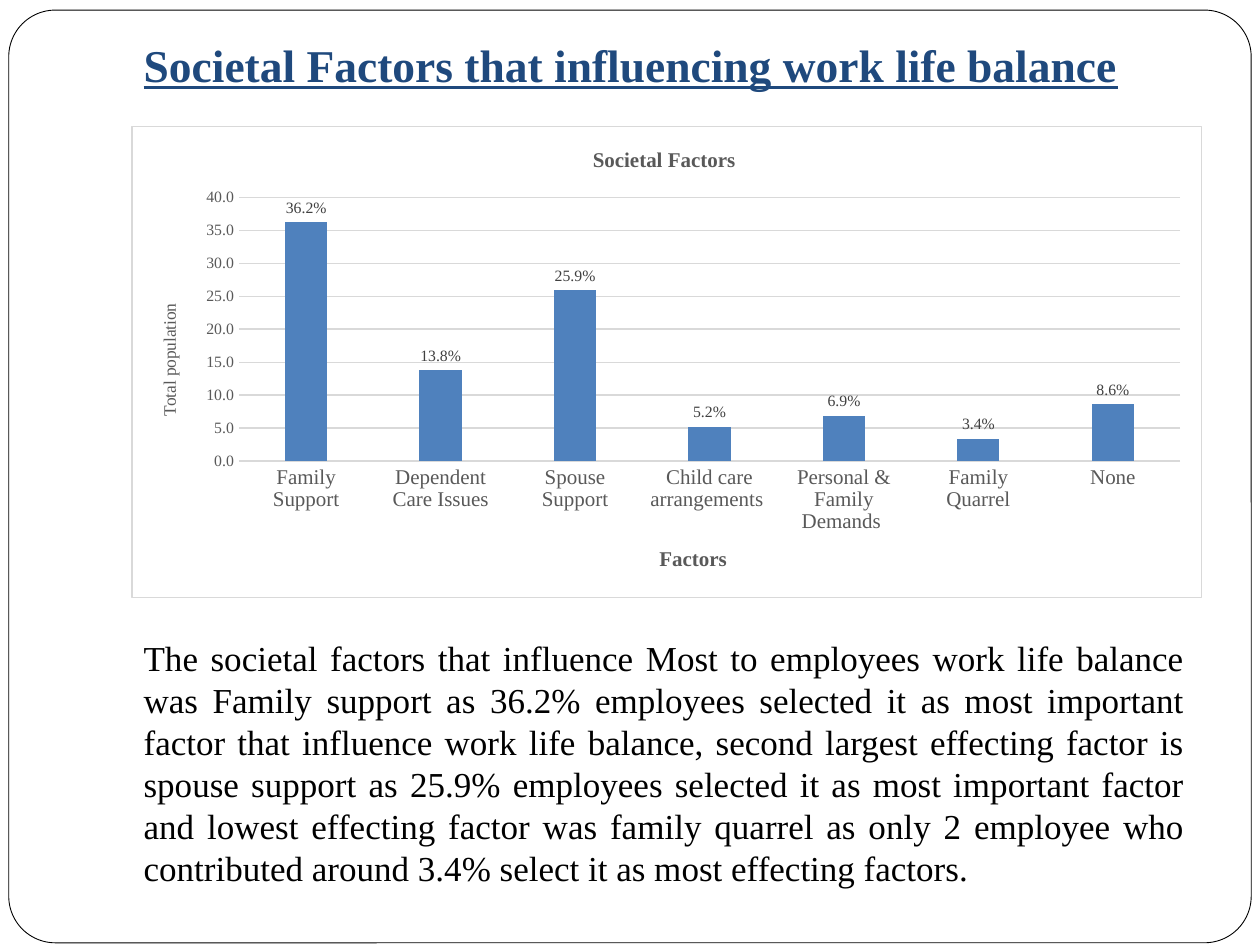
"""Build a slide on the societal factors that influence work life balance."""
from dataclasses import dataclass, field

from pptx import Presentation, util as u
from pptx.chart.data import CategoryChartData
from pptx.dml.color import RGBColor
from pptx.enum import chart as charts, shapes, text
from pptx.oxml import parse_xml
from pptx.oxml.ns import nsdecls, qn

FONT = "Times New Roman"
GREY, PALE, WHITE, BLACK = "595959", "D9D9D9", "FFFFFF", "000000"
FACTORS = {
    "Family Support": 36.2,
    "Dependent Care Issues": 13.8,
    "Spouse Support": 25.9,
    "Child care arrangements ": 5.2,
    "Personal & Family Demands ": 6.9,
    "Family Quarrel": 3.4,
    "None": 8.6,
}
PLOT_AREA = {"x": 0.1, "y": 0.15, "w": 0.88, "h": 0.56}


@dataclass
class TextBlock:
    place: tuple
    words: str
    size: float
    color: str
    align: text.PP_ALIGN = text.PP_ALIGN.LEFT
    style: dict = field(default_factory=dict)


TEXT_BLOCKS = [
    TextBlock((75, 17.5, 611, 39), "Societal Factors that influencing work life balance",
              26, "1F497D", style={"bold": True, "underline": True}),
    TextBlock((75, 360, 609, 152.5),
              "The societal factors that influence Most to employees work life balance was "
              "Family support as 36.2% employees selected it as most important factor that "
              "influence work life balance, second largest effecting factor is spouse support "
              "as 25.9% employees selected it as most important factor and lowest effecting "
              "factor was family quarrel as only 2 employee who contributed around 3.4% select "
              "it as most effecting factors.",
              20, BLACK, text.PP_ALIGN.JUSTIFY),
]


def points(place: tuple) -> list:
    return [u.Pt(value) for value in place]


def paint(target, color: str) -> None:
    if hasattr(target, "solid"):
        target.solid()
        target = target.fore_color
    else:
        target = target.color
    target.rgb = RGBColor.from_string(color)


def set_all(target, values: dict) -> None:
    for name, value in values.items():
        setattr(target, name, value)


def set_font(font, size: float, color: str, **style) -> None:
    set_all(font, {"name": FONT, "size": u.Pt(size), **style})
    paint(font, color)


def draw_line(line, color: str, width: float) -> None:
    paint(line.fill, color)
    line.width = u.Pt(width)


def draw_frame(page) -> None:
    frame = page.shapes.add_shape(shapes.MSO_SHAPE.ROUNDED_RECTANGLE,
                                  *points((5, 5.75, 710, 533)))
    frame.adjustments[0] = 0.05
    frame.shadow.inherit = False
    paint(frame.fill, WHITE)
    draw_line(frame.line, BLACK, 0.5)


def write(para, words: str, size: float, color: str, **style) -> None:
    span = para.add_run()
    span.text = words
    set_font(span.font, size, color, **style)


def draw_text(page, block: TextBlock) -> None:
    box = page.shapes.add_textbox(*points(block.place))
    set_all(box.text_frame, {"word_wrap": True,
                             "auto_size": text.MSO_AUTO_SIZE.SHAPE_TO_FIT_TEXT})
    para = box.text_frame.paragraphs[0]
    para.alignment = block.align
    write(para, block.words, block.size, block.color, **block.style)


def set_title(title, words: str, size: float, bold: bool) -> None:
    write(title.text_frame.paragraphs[0], words, size, GREY, bold=bold)


def style_axis(axis, title: str, title_size: float, bold: bool, size: float) -> None:
    set_all(axis, {"major_tick_mark": charts.XL_TICK_MARK.NONE,
                   "minor_tick_mark": charts.XL_TICK_MARK.NONE})
    set_font(axis.tick_labels.font, size, GREY)
    set_title(axis.axis_title, title, title_size, bold)


def frame_chart(chart) -> None:
    root = chart.element
    root.find(qn("c:chart")).addnext(parse_xml(
        f'<c:spPr {nsdecls("c", "a")}>'
        f'<a:solidFill><a:srgbClr val="{WHITE}"/></a:solidFill>'
        f'<a:ln w="{u.Pt(0.75)}"><a:solidFill><a:srgbClr val="{PALE}"/></a:solidFill></a:ln>'
        '</c:spPr>'))
    plot_area = root.find(".//" + qn("c:plotArea"))
    for layout in plot_area.findall(qn("c:layout")):
        plot_area.remove(layout)
    modes = '<c:xMode val="edge"/><c:yMode val="edge"/>'
    sides = "".join(f'<c:{side} val="{share}"/>' for side, share in PLOT_AREA.items())
    plot_area.insert(0, parse_xml(
        f'<c:layout {nsdecls("c")}><c:manualLayout><c:layoutTarget val="inner"/>'
        f'{modes}{sides}</c:manualLayout></c:layout>'))


def draw_chart(page) -> None:
    data = CategoryChartData(number_format="0.0")
    data.categories = list(FACTORS)
    data.add_series("Series 1", list(FACTORS.values()))
    chart = page.shapes.add_chart(charts.XL_CHART_TYPE.COLUMN_CLUSTERED,
                                  *points((75, 72, 612, 270)), data).chart
    set_font(chart.font, 10, BLACK)
    chart.has_legend = False
    set_title(chart.chart_title, "Societal Factors ", 12, True)

    style_axis(chart.category_axis, "Factors", 12, True, 12)
    draw_line(chart.category_axis.format.line, PALE, 0.75)
    values = chart.value_axis
    style_axis(values, "Total population", 10, False, 9)
    set_all(values, {"minimum_scale": 0, "maximum_scale": 40, "major_unit": 5})
    set_all(values.tick_labels, {"number_format": "0.0", "number_format_is_linked": False})
    values.format.line.fill.background()
    draw_line(values.major_gridlines.format.line, PALE, 0.75)

    plot = chart.plots[0]
    set_all(plot, {"gap_width": 219, "overlap": -27, "vary_by_categories": False,
                   "has_data_labels": True})
    paint(plot.series[0].format.fill, "4F81BD")
    set_all(plot.data_labels, {"show_value": True, "number_format": '0.0"%"',
                               "number_format_is_linked": False,
                               "position": charts.XL_LABEL_POSITION.OUTSIDE_END})
    set_font(plot.data_labels.font, 9, "404040")
    frame_chart(chart)


def main() -> None:
    deck = Presentation()
    set_all(deck, {"slide_width": u.Pt(720), "slide_height": u.Pt(540)})
    page = deck.slides.add_slide(deck.slide_layouts[6])
    draw_frame(page)
    draw_chart(page)
    for block in TEXT_BLOCKS:
        draw_text(page, block)
    deck.save("out.pptx")


if __name__ == "__main__":
    main()
